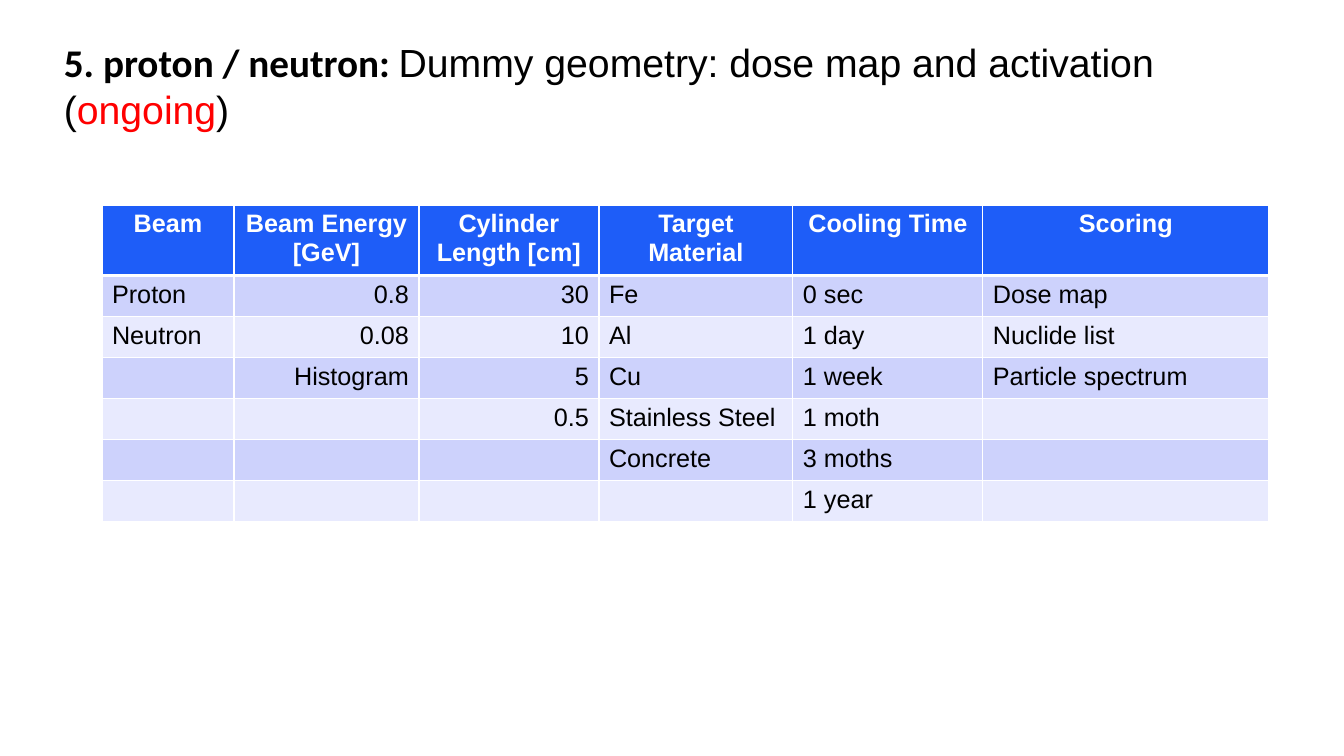
from pptx import Presentation
from pptx import util as u
from pptx.dml.color import RGBColor
from pptx.enum import text
from pptx.oxml import parse_xml
from pptx.oxml.ns import nsdecls

PX = 914400 / 100.8
HUES = {"ink": "000000", "white": "FFFFFF", "red": "FF0000",
        "head": "1E5DF8", "odd": "CDD2FC", "even": "E8EAFE"}
TITLE = [("5. proton / neutron: ", "Calibri", "ink", True),
         ("Dummy geometry: dose map and activation (", "Arial", "ink", False),
         ("ongoing", "Arial", "red", False),
         (")", "Arial", "ink", False)]
COLUMNS = [
    ("Beam", 132, "LEFT", ["Proton", "Neutron"]),
    ("Beam Energy [GeV]", 185, "RIGHT", ["0.8", "0.08", "Histogram"]),
    ("Cylinder Length [cm]", 180, "RIGHT", ["30", "10", "5", "0.5"]),
    ("Target Material", 194, "LEFT",
     ["Fe", "Al", "Cu", "Stainless Steel", "Concrete"]),
    ("Cooling Time", 190, "LEFT",
     ["0 sec", "1 day", "1 week", "1 moth", "3 moths", "1 year"]),
    ("Scoring", 286, "LEFT", ["Dose map", "Nuclide list", "Particle spectrum"]),
]
HEAD, ROW = 70, 41


def px(n):
    """Turn pixels into EMU."""
    return u.Emu(round(n * PX))


def hue(name):
    """Look up a colour by name."""
    return RGBColor.from_string(HUES[name])


def add_run(para, words, face, size, tint, bold):
    """Add one styled run to a paragraph."""
    run = para.add_run()
    run.text = words
    font = run.font
    font.name, font.size, font.bold = face, u.Pt(size), bold
    font.color.rgb = hue(tint)


def add_title(slide, x, y, w, h):
    """Place the slide title in its box."""
    frame = slide.shapes.add_textbox(px(x), px(y), px(w), px(h)).text_frame
    frame.word_wrap = True
    frame.vertical_anchor = text.MSO_ANCHOR.MIDDLE
    for words, face, tint, bold in TITLE:
        add_run(frame.paragraphs[0], words, face, 28, tint, bold)


def style_cell(cell, fill, base):
    """Give a cell white borders and a solid fill."""
    props = cell._tc.get_or_add_tcPr()
    for side, width in (("L", 1), ("R", 1), ("T", 1), ("B", base)):
        props.append(parse_xml(
            f'<a:ln{side} {nsdecls("a")} w="{u.Pt(width)}"><a:solidFill>'
            f'<a:srgbClr val="{HUES["white"]}"/></a:solidFill></a:ln{side}>'))
    cell.fill.solid()
    cell.fill.fore_color.rgb = hue(fill)


def add_grid(slide, x, y):
    """Place the table of run settings with its top left at x, y."""
    rows = 1 + max(len(items) for *_, items in COLUMNS)
    wide = sum(width for _, width, *_ in COLUMNS)
    grid = slide.shapes.add_table(rows, len(COLUMNS), px(x), px(y), px(wide),
                                  px(HEAD + ROW * (rows - 1))).table
    for r, row in enumerate(grid.rows):
        row.height = px(ROW if r else HEAD)
    for c, (label, width, side, items) in enumerate(COLUMNS):
        grid.columns[c].width = px(width)
        for r in range(rows):
            cell = grid.cell(r, c)
            fill = ("odd" if r % 2 else "even") if r else "head"
            style_cell(cell, fill, 1 if r else 3)
            para = cell.text_frame.paragraphs[0]
            para.alignment = getattr(text.PP_ALIGN, side if r else "CENTER")
            if r == 0:
                add_run(para, label, "Arial", 18, "white", True)
            elif r <= len(items):
                add_run(para, items[r - 1], "Arial", 18, "ink", False)


def main():
    """Build the slide and save it."""
    deck = Presentation()
    deck.slide_width, deck.slide_height = px(1344), px(756)
    slide = deck.slides.add_slide(deck.slide_layouts[6])
    add_title(slide, 54, 33, 1215, 105)
    add_grid(slide, 102, 205)
    deck.save("out.pptx")


if __name__ == "__main__":
    main()
